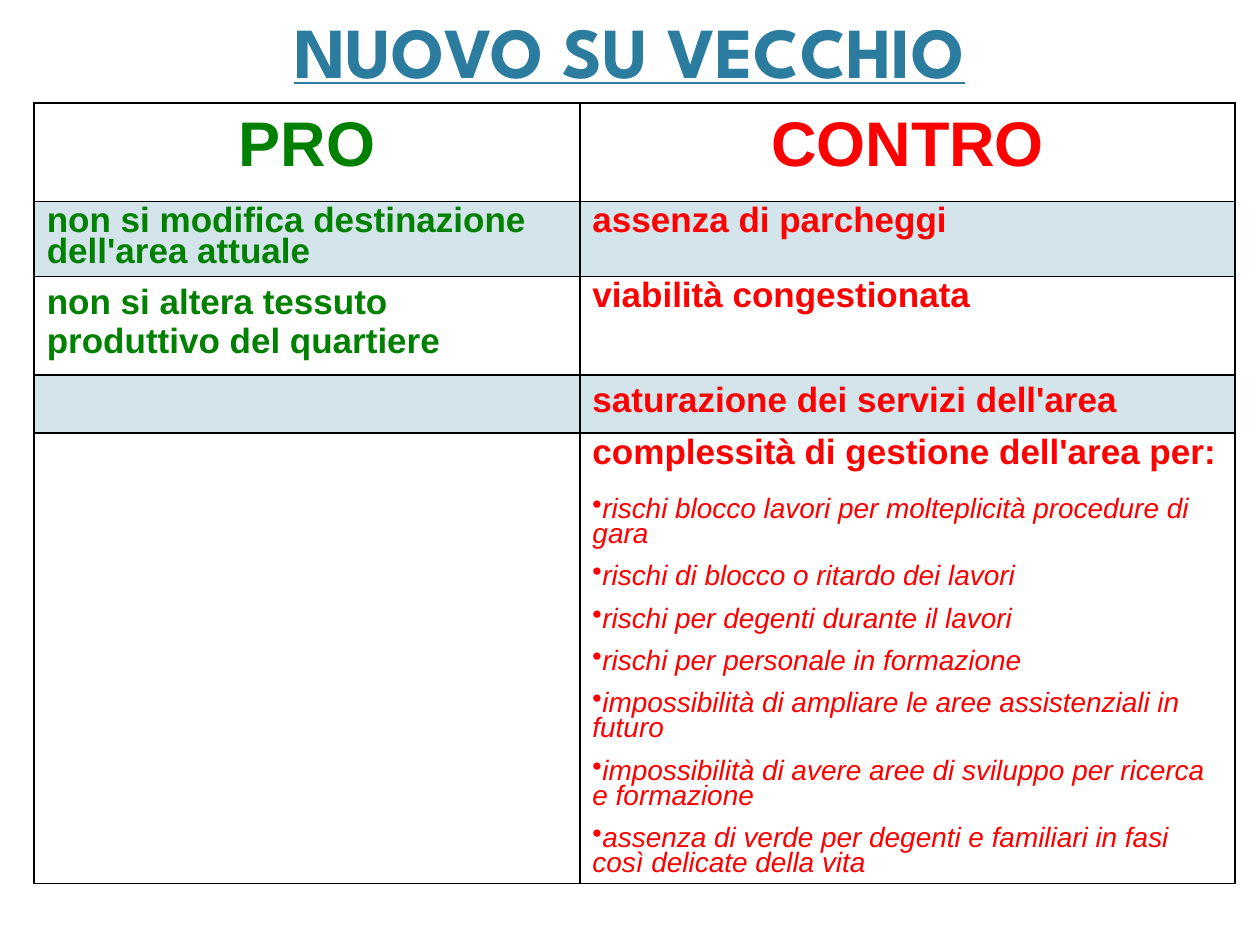
from dataclasses import dataclass

from lxml.etree import SubElement
from pptx import Presentation
from pptx.dml.color import RGBColor
from pptx.enum.text import MSO_ANCHOR, MSO_AUTO_SIZE, PP_ALIGN
from pptx.oxml.ns import qn
from pptx.util import Cm, Pt


@dataclass(frozen=True)
class Theme:
    """Colours, fonts and type sizes of the slide."""
    accent: str = "2C7C9F"
    pro: str = "008000"
    contro: str = "FF0000"
    border: str = "000000"
    band_alpha: int = 20
    title_font: str = "League Spartan"
    body_font: str = "Arial"
    title: int = 41
    heading: int = 36
    body: int = 20
    detail: int = 16


THEME = Theme()
COL_WIDTHS = (11, 13.21)
ROW_HEIGHTS = (1.98, 1.51, 1.98, 1.17, 9.09)
BANDED_ROWS = (1, 3)
RISKS = (
    "rischi blocco lavori per molteplicità procedure di gara",
    "rischi di blocco o ritardo dei lavori",
    "rischi per degenti durante il lavori",
    "rischi per personale in formazione",
    "impossibilità di ampliare le aree assistenziali in futuro",
    "impossibilità di avere aree di sviluppo per ricerca e formazione",
    "assenza di verde per degenti e familiari in fasi così delicate della vita",
)


def add_run(p, text, size, color, font=THEME.body_font, bold=True, italic=False):
    """Add one formatted run to a paragraph."""
    r = p.add_run()
    r.text = text
    r.font.name, r.font.size = font, Pt(size)
    r.font.bold, r.font.italic = bold, italic
    r.font.color.rgb = RGBColor.from_string(color)
    return r


def add_title(s, text):
    """Place and format the title placeholder."""
    sp = s.shapes.title
    sp.left, sp.top, sp.width, sp.height = Cm(1.52), Cm(-0.08), Cm(22.35), Cm(2.08)
    tf = sp.text_frame
    tf.auto_size = MSO_AUTO_SIZE.NONE
    tf.vertical_anchor = MSO_ANCHOR.BOTTOM
    p = tf.paragraphs[0]
    p.alignment = PP_ALIGN.CENTER
    add_run(p, text, THEME.title, THEME.accent, THEME.title_font).font.underline = True


def set_borders(cell):
    """Draw a thin line on every side of a cell."""
    tcPr = cell._tc.get_or_add_tcPr()
    for side in ("a:lnL", "a:lnR", "a:lnT", "a:lnB"):
        ln = SubElement(tcPr, qn(side), w=str(Pt(1)))
        fill = SubElement(ln, qn("a:solidFill"))
        SubElement(fill, qn("a:srgbClr"), val=THEME.border)


def set_fill(cell, banded):
    """Tint a banded cell and leave any other one clear."""
    if not banded:
        cell.fill.background()
        return
    cell.fill.solid()
    cell.fill.fore_color.rgb = RGBColor.from_string(THEME.accent)
    color = cell._tc.tcPr.find(qn("a:solidFill")).find(qn("a:srgbClr"))
    SubElement(color, qn("a:alpha"), val=str(THEME.band_alpha * 1000))


def add_table(s):
    """Add the bordered, banded grid and return its table."""
    frame = s.shapes.add_table(len(ROW_HEIGHTS), len(COL_WIDTHS), Cm(0.69), Cm(2.08),
                               Cm(sum(COL_WIDTHS)), Cm(sum(ROW_HEIGHTS)))
    table = frame.table
    table.first_row = table.horz_banding = False
    for column, width in zip(table.columns, COL_WIDTHS):
        column.width = Cm(width)
    for i, (row, height) in enumerate(zip(table.rows, ROW_HEIGHTS)):
        row.height = Cm(height)
        for cell in row.cells:
            set_borders(cell)
            set_fill(cell, i in BANDED_ROWS)
    return table


def write_heading(cell, text, color):
    """Write a centred column heading."""
    p = cell.text_frame.paragraphs[0]
    p.alignment = PP_ALIGN.CENTER
    add_run(p, text, THEME.heading, color)


def write_point(cell, text, color, spacing=None, before=None, after=None):
    """Write a bold argument in a cell."""
    p = cell.text_frame.paragraphs[0]
    p.line_spacing = spacing
    p.space_before = before
    p.space_after = after
    add_run(p, text, THEME.body, color)


def add_bullet(cell, text, color):
    """Append an italic bulleted detail to a cell."""
    p = cell.text_frame.add_paragraph()
    p.line_spacing = 0.8
    p.space_before = Pt(10)
    SubElement(p._p.get_or_add_pPr(), qn("a:buChar"), char="•")
    add_run(p, text, THEME.detail, color, bold=False, italic=True)


def main():
    """Build the slide and save it."""
    prs = Presentation()
    prs.slide_width, prs.slide_height = Cm(25.4), Cm(19.05)
    s = prs.slides.add_slide(prs.slide_layouts[5])
    add_title(s, "NUOVO SU VECCHIO")
    table = add_table(s)
    pro, contro = THEME.pro, THEME.contro
    write_heading(table.cell(0, 0), "PRO", pro)
    write_heading(table.cell(0, 1), "CONTRO", contro)
    write_point(table.cell(1, 0), "non si modifica destinazione dell'area attuale", pro, 0.8)
    write_point(table.cell(1, 1), "assenza di parcheggi", contro, 0.8)
    write_point(table.cell(2, 0), "non si altera tessuto produttivo del quartiere", pro)
    write_point(table.cell(2, 1), "viabilità congestionata", contro, 0.8, Pt(10))
    write_point(table.cell(3, 1), "saturazione dei servizi dell'area", contro)
    management = table.cell(4, 1)
    write_point(management, "complessità di gestione dell'area per:", contro, 0.8, Pt(10), Pt(6))
    for risk in RISKS:
        add_bullet(management, risk, contro)
    prs.save("out.pptx")


if __name__ == "__main__":
    main()
